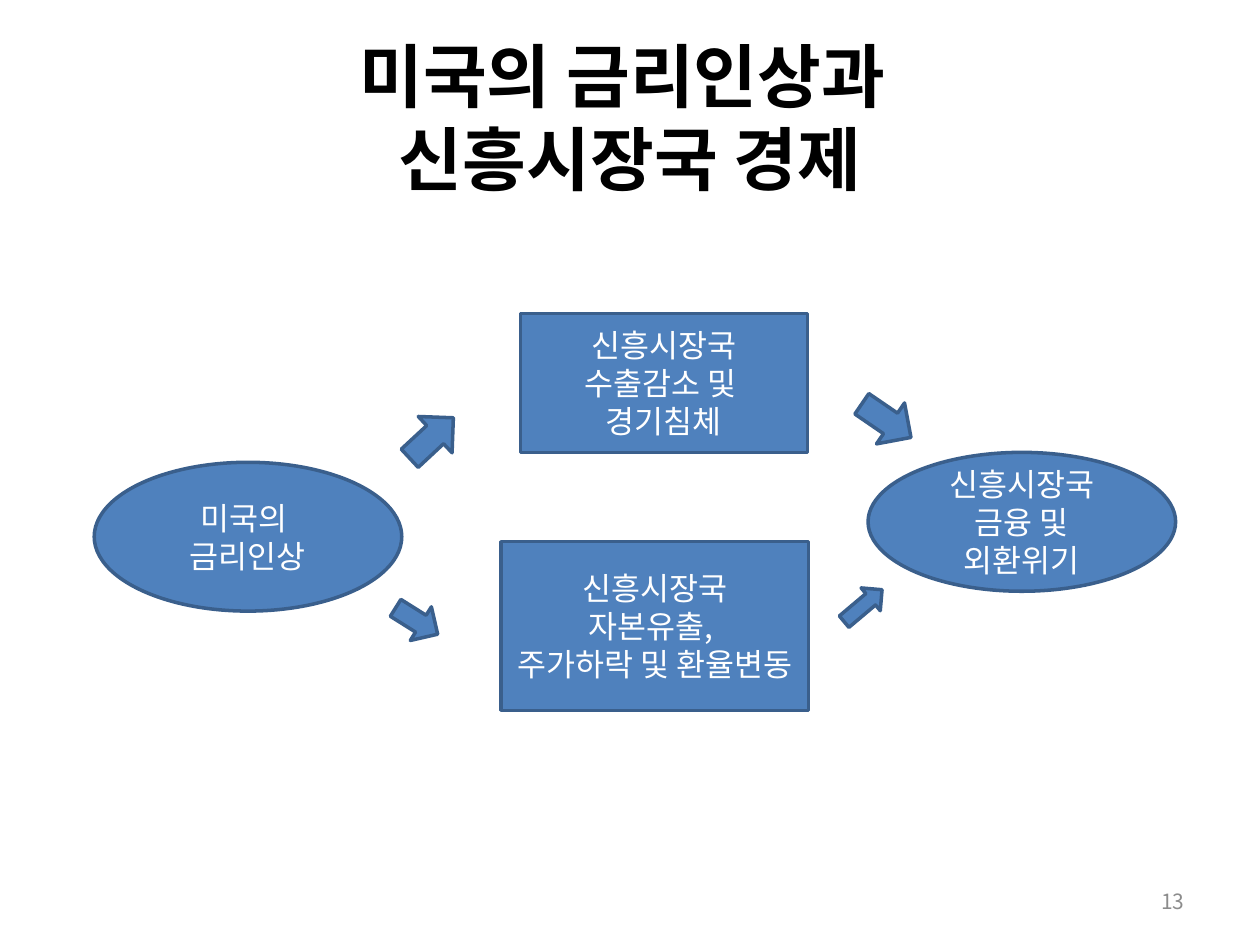
from lxml import etree
from pptx import Presentation
from pptx.dml.color import RGBColor
from pptx.enum.shapes import MSO_SHAPE
from pptx.enum.text import MSO_ANCHOR, PP_ALIGN
from pptx.oxml.ns import qn
from pptx.util import Cm, Pt

ELLIPSE, RECTANGLE = MSO_SHAPE.OVAL, MSO_SHAPE.RECTANGLE
ARROW = MSO_SHAPE.RIGHT_ARROW
MIDDLE = MSO_ANCHOR.MIDDLE
CENTER, RIGHT = PP_ALIGN.CENTER, PP_ALIGN.RIGHT
TITLE_ONLY = 5
FONT = "Noto Sans CJK KR"
FILL, OUTLINE = "4F81BD", "3A5F8C"
BLACK, WHITE, GRAY = "000000", "FFFFFF", "8C8C8C"

# Kind, left, top, width, height (cm), lines of text
BOXES = [
    (ELLIPSE, 1.9, 9.32, 6.2, 3, ["미국의 ", "금리인상"]),
    (RECTANGLE, 10.49, 6.32, 5.79, 2.8, ["신흥시장국", "수출감소 및 ", "경기침체"]),
    (RECTANGLE, 10.1, 10.92, 6.2, 3.4,
     ["신흥시장국", "자본유출, ", "주가하락 및 환율변동"]),
    (ELLIPSE, 17.5, 9.12, 6.2, 2.8, ["신흥시장국 금융 및 외환위기"]),
]

# Left, top, width, height (cm), rotation (degrees)
ARROWS = [
    (8.1, 8.33, 1.2, 1, 317.1),
    (7.9, 12.12, 1, 0.8, 32.1),
    (17.27, 7.98, 1.2, 1, 34.4),
    (16.9, 11.91, 1, 0.6, 319.9),
]


def color(value):
    return RGBColor.from_string(value)


def place(shape, left, top, width, height):
    shape.left, shape.top = Cm(left), Cm(top)
    shape.width, shape.height = Cm(width), Cm(height)


def write_text(shape, lines, size, text_color, alignment=CENTER, bold=False):
    frame = shape.text_frame
    frame.word_wrap = True
    frame.vertical_anchor = MIDDLE
    frame.text = "\n".join(lines)
    for paragraph in frame.paragraphs:
        paragraph.alignment = alignment
        font = paragraph.font
        font.name, font.size, font.bold = FONT, Pt(size), bold
        font.color.rgb = color(text_color)
        # Korean letters take the East Asian typeface
        properties = paragraph._p.pPr.find(qn("a:defRPr"))
        etree.SubElement(properties, qn("a:ea"), typeface=FONT)


def add_block(slide, kind, left, top, width, height):
    shape = slide.shapes.add_shape(kind, Cm(left), Cm(top), Cm(width), Cm(height))
    shape.shadow.inherit = False
    shape.fill.solid()
    shape.fill.fore_color.rgb = color(FILL)
    shape.line.color.rgb = color(OUTLINE)
    shape.line.width = Pt(2)
    return shape


def add_title(slide):
    title = slide.shapes.title
    place(title, 1.27, 0.76, 22.86, 3.18)
    # A vertical tab is a line break within the paragraph
    write_text(title, ["미국의 금리인상과 \v신흥시장국 경제"], 39.6, BLACK, bold=True)


def add_page_number(slide):
    box = slide.shapes.add_textbox(Cm(18.21), Cm(17.65), Cm(5.92), Cm(1.02))
    write_text(box, ["13"], 12, GRAY, RIGHT)


def main():
    presentation = Presentation()
    presentation.slide_width, presentation.slide_height = Cm(25.4), Cm(19.05)
    slide = presentation.slides.add_slide(presentation.slide_layouts[TITLE_ONLY])

    add_title(slide)
    add_page_number(slide)

    # Causes and effects
    for kind, left, top, width, height, lines in BOXES:
        box = add_block(slide, kind, left, top, width, height)
        write_text(box, lines, 18, WHITE)

    # Arrows between them
    for left, top, width, height, rotation in ARROWS:
        add_block(slide, ARROW, left, top, width, height).rotation = rotation

    presentation.save("out.pptx")


if __name__ == "__main__":
    main()
